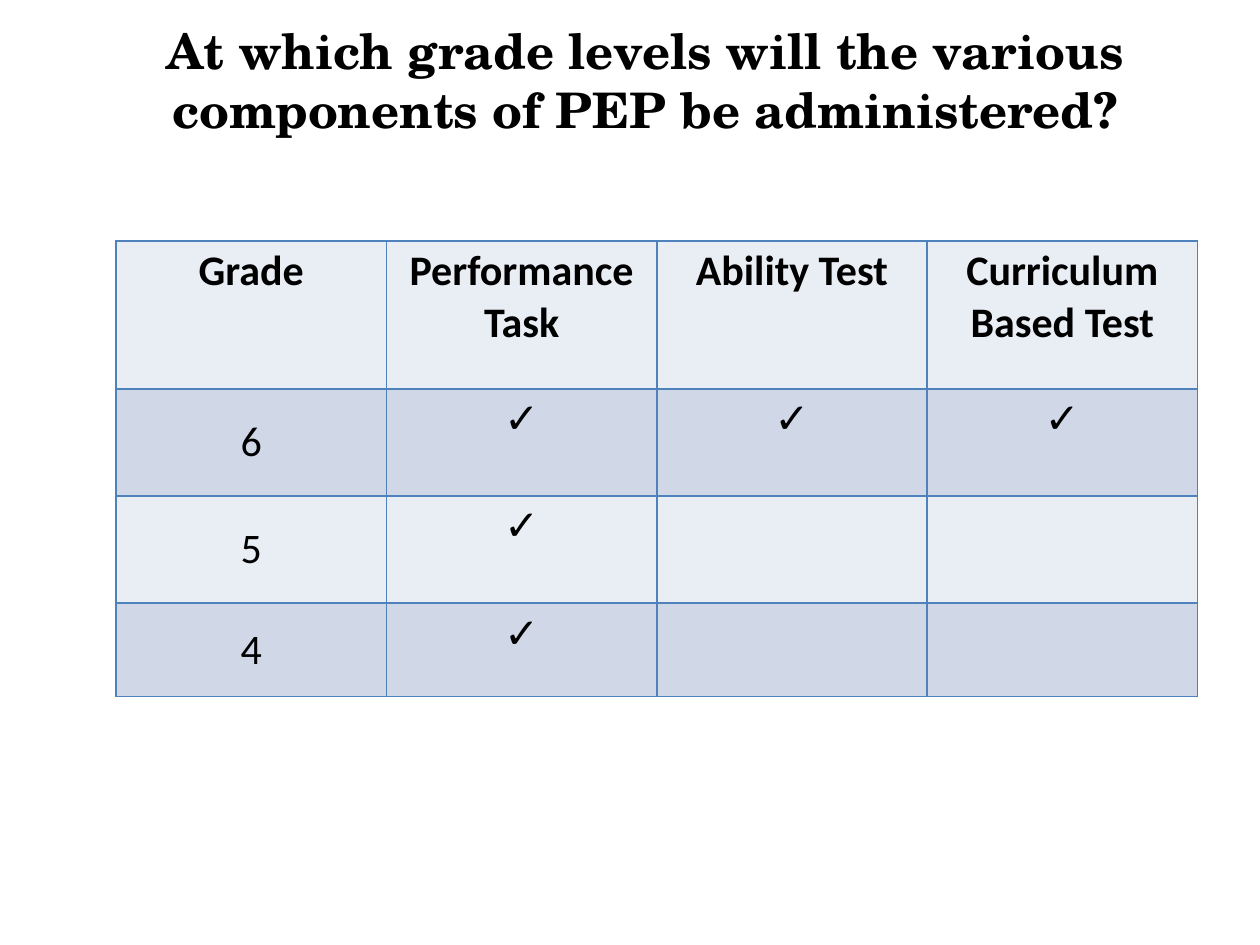
from dataclasses import dataclass

from lxml.etree import SubElement
from pptx import Presentation
from pptx.dml.color import RGBColor
from pptx.enum.text import MSO_ANCHOR, MSO_AUTO_SIZE, PP_ALIGN
from pptx.oxml.ns import qn
from pptx.util import Cm, Pt


@dataclass(frozen=True)
class Theme:
    ink: str = "000000"
    border: str = "4F81BD"
    bands: tuple = ("E9EDF4", "D0D8E8")
    title_font: str = "TeX Gyre Schola"
    table_font: str = "Calibri"
    title_size: int = 28
    table_size: int = 24
    border_width: int = 1


TITLE = "At which grade levels will the various components of PEP be administered?"
COMPONENTS = ["Performance Task", "Ability Test", "Curriculum Based Test"]
TESTS_PER_GRADE = {"6": 3, "5": 1, "4": 1}
ROW_HEIGHTS = [2.98, 2.16, 2.16, 1.88]
COLUMN_WIDTH = 5.45


def write(frame, text, *, font, size, color, bold=False, align=PP_ALIGN.CENTER):
    paragraph = frame.paragraphs[0]
    paragraph.alignment = align
    run = paragraph.add_run()
    run.text = text
    run.font.name = font
    run.font.size = Pt(size)
    run.font.bold = bold
    run.font.color.rgb = RGBColor.from_string(color)


class SlideBuilder:
    def __init__(self, slide, theme):
        self.slide = slide
        self.theme = theme

    def title(self, text, left, top, width, height):
        heading = self.slide.shapes.title
        heading.left, heading.top = Cm(left), Cm(top)
        heading.width, heading.height = Cm(width), Cm(height)
        frame = heading.text_frame
        frame.word_wrap = True
        frame.auto_size = MSO_AUTO_SIZE.NONE
        frame.vertical_anchor = MSO_ANCHOR.MIDDLE
        write(frame, text, font=self.theme.title_font, size=self.theme.title_size,
              color=self.theme.ink, bold=True)

    def table(self, rows, left, top, column_width, row_heights):
        columns = len(rows[0])
        grid = self.slide.shapes.add_table(
            len(rows), columns, Cm(left), Cm(top),
            Cm(column_width * columns), Cm(sum(row_heights))).table
        for column in grid.columns:
            column.width = Cm(column_width)
        for r, (texts, height) in enumerate(zip(rows, row_heights)):
            grid.rows[r].height = Cm(height)
            for c, text in enumerate(texts):
                is_grade = r > 0 and c == 0
                self.cell(grid.cell(r, c), text, band=r % 2, bold=r == 0,
                          anchor=MSO_ANCHOR.MIDDLE if is_grade else MSO_ANCHOR.TOP)

    def cell(self, cell, text, band, bold, anchor):
        cell.margin_left = cell.margin_right = Cm(0.18)
        cell.margin_top = cell.margin_bottom = Cm(0.1)
        cell.vertical_anchor = anchor
        self.cell_borders(cell)
        cell.fill.solid()
        cell.fill.fore_color.rgb = RGBColor.from_string(self.theme.bands[band])
        if text:
            write(cell.text_frame, text, font=self.theme.table_font,
                  size=self.theme.table_size, color=self.theme.ink, bold=bold)

    def cell_borders(self, cell):
        """Outline all four sides; call before the fill, which must follow in the XML."""
        properties = cell._tc.get_or_add_tcPr()
        for side in ("a:lnL", "a:lnR", "a:lnT", "a:lnB"):
            line = SubElement(properties, qn(side), w=str(Pt(self.theme.border_width)))
            fill = SubElement(line, qn("a:solidFill"))
            SubElement(fill, qn("a:srgbClr"), val=self.theme.border)


def main():
    presentation = Presentation()
    presentation.slide_width, presentation.slide_height = Cm(25.4), Cm(19.05)
    title_only = presentation.slide_layouts[5]
    builder = SlideBuilder(presentation.slides.add_slide(title_only), Theme())

    builder.title(TITLE, left=0.84, top=0.89, width=24.33, height=1.42)
    rows = [["Grade", *COMPONENTS]]
    for grade, tests in TESTS_PER_GRADE.items():
        rows.append([grade] + ["✓"] * tests + [""] * (len(COMPONENTS) - tests))
    builder.table(rows, left=2.34, top=4.86, column_width=COLUMN_WIDTH,
                  row_heights=ROW_HEIGHTS)
    presentation.save("out.pptx")


if __name__ == "__main__":
    main()
